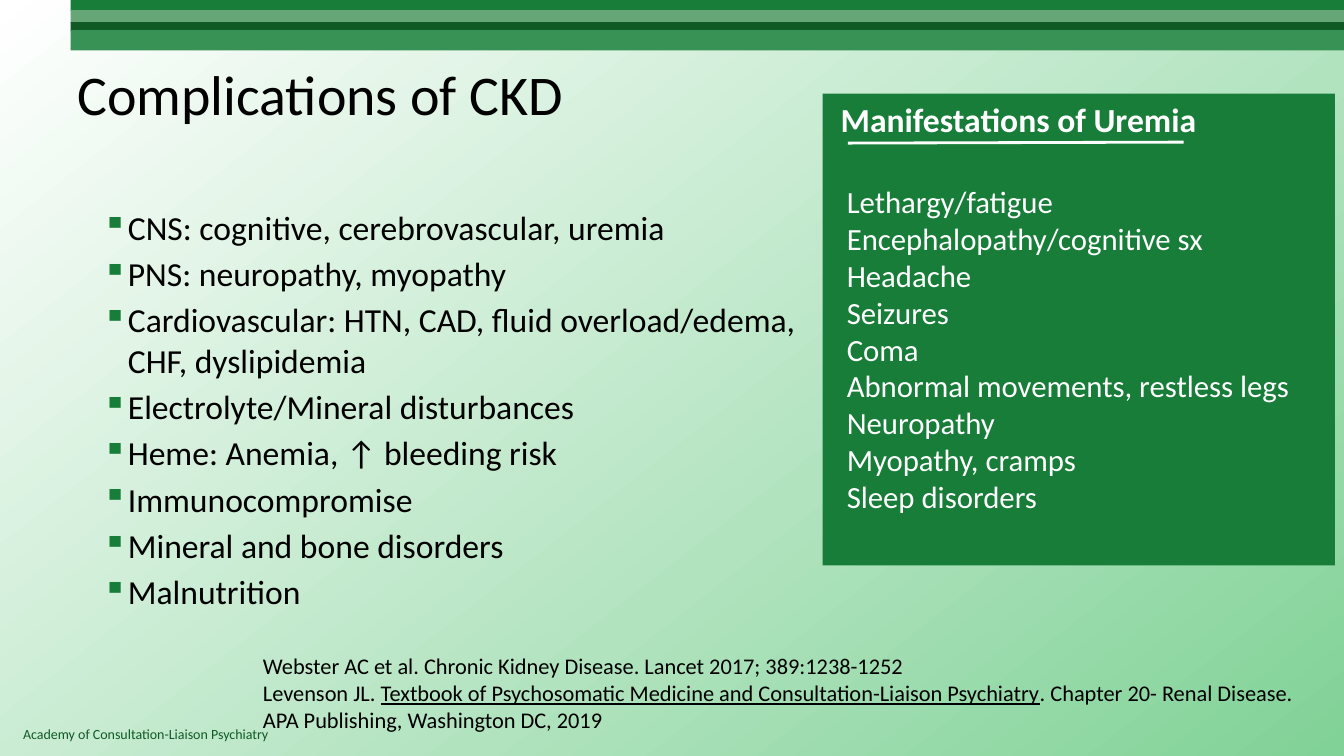
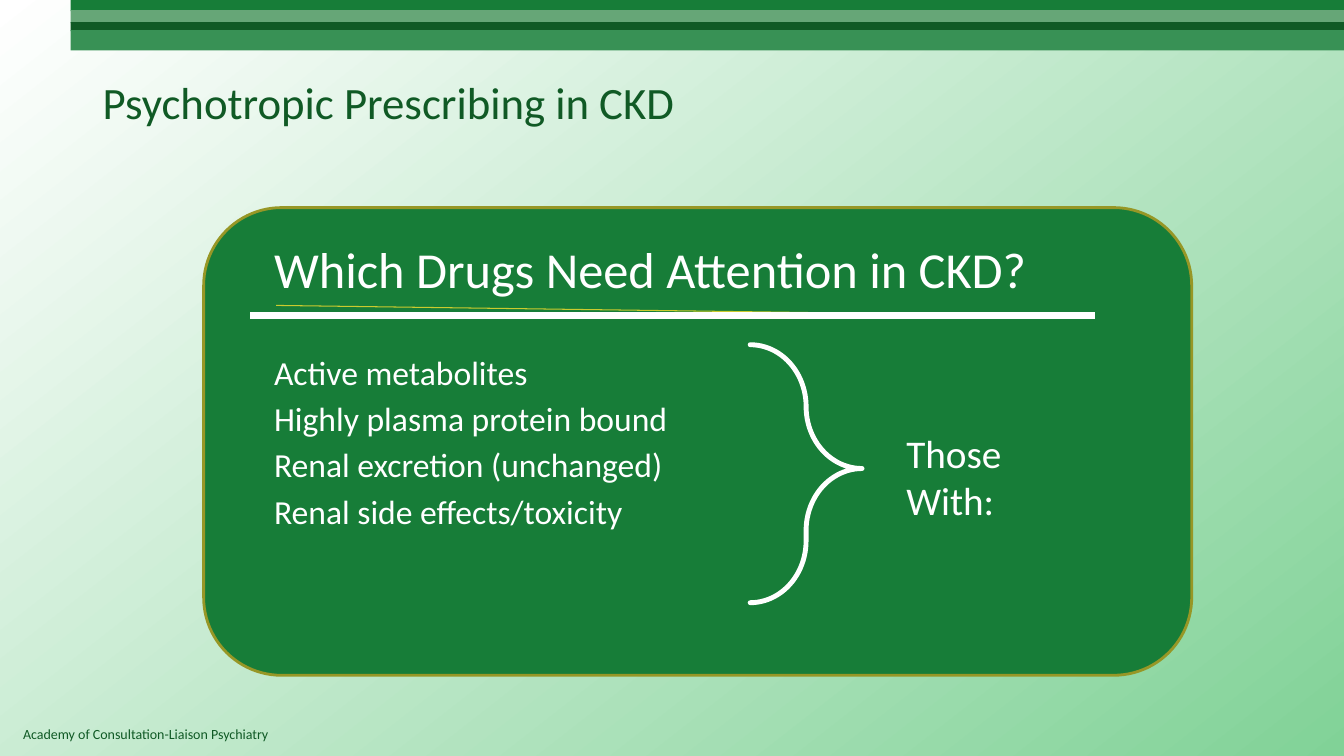
from lxml import etree
from pptx import Presentation
from pptx import util as u
from pptx.dml.color import RGBColor
from pptx.enum import shapes, text
from pptx.oxml.ns import qn

PX = 9144  # EMU per px, 100 px to the inch
WIDTH, HEIGHT = 1333, 750
FONT = "Calibri"
GAP = 4.3  # points between list items

COLORS = {
    "green": "177D38",
    "sage": "66A677",
    "dark": "105A25",
    "mid": "389155",
    "mint": "81D297",
    "white": "FFFFFF",
    "black": "000000",
    "olive": "979726",
    "lime": "CBCB2E",
}

LOOKS = {
    "large title": {"size": 40, "color": "black"},
    "title": {"size": 32, "color": "dark"},
    "footer": {"size": 10, "color": "dark"},
    "list": {"size": 24, "color": "black"},
    "reference": {"size": 16, "color": "black"},
    "panel heading": {"size": 24, "color": "white", "bold": True},
    "panel item": {"size": 22, "color": "white"},
    "card heading": {"size": 36, "color": "white"},
    "card item": {"size": 24, "color": "white"},
    "card label": {"size": 28, "color": "white"},
}

BANDS = [(0, 11, "green"), (10, 13, "sage"), (22, 9, "dark"), (30, 20, "mid")]
FOOTER = "Academy of Consultation-Liaison Psychiatry"

COMPLICATIONS = [
    "CNS: cognitive, cerebrovascular, uremia",
    "PNS: neuropathy, myopathy",
    "Cardiovascular: HTN, CAD, fluid overload/edema, CHF, dyslipidemia",
    "Electrolyte/Mineral disturbances",
    "Heme: Anemia, ↑ bleeding risk",
    "Immunocompromise",
    "Mineral and bone disorders",
    "Malnutrition",
]
UREMIA_SIGNS = [
    "Lethargy/fatigue",
    "Encephalopathy/cognitive sx",
    "Headache",
    "Seizures",
    "Coma",
    "Abnormal movements, restless legs",
    "Neuropathy",
    "Myopathy, cramps",
    "Sleep disorders",
]
REFERENCES = [
    [("Webster AC et al. Chronic Kidney Disease. Lancet 2017; 389:1238-1252", False)],
    [
        ("Levenson JL. ", False),
        ("Textbook of Psychosomatic Medicine and Consultation-Liaison Psychiatry", True),
        (". Chapter 20- Renal Disease. APA Publishing, Washington DC, 2019", False),
    ],
]
DRUG_TRAITS = [
    "Active metabolites",
    "Highly plasma protein bound",
    "Renal excretion (unchanged)",
    "Renal side effects/toxicity",
]


def rgb(name):
    return RGBColor.from_string(COLORS[name])


def px(*lengths):
    return [u.Emu(length * PX) for length in lengths]


def add_bullet(para):
    para_format = para._p.get_or_add_pPr()
    color = etree.SubElement(para_format, qn("a:buClr"))
    etree.SubElement(color, qn("a:srgbClr"), val=COLORS["green"])
    etree.SubElement(para_format, qn("a:buChar"), char="▪")


def add_para(frame, spans, look, before=0, left=0, bullet=False):
    """Append a paragraph; spans is a string or a list of (words, underlined)."""
    para = frame.add_paragraph() if frame.text else frame.paragraphs[0]
    para.alignment = text.PP_ALIGN.LEFT
    if before:
        para.space_before = u.Pt(before)
    if left:
        para_format = para._p.get_or_add_pPr()
        para_format.set("marL", str(left * PX))
        para_format.set("indent", str(-left * PX if bullet else 0))
    if bullet:
        add_bullet(para)
    style = LOOKS[look]
    values = {"name": FONT, "size": u.Pt(style["size"]), "bold": style.get("bold", False)}
    for words, underlined in [(spans, False)] if isinstance(spans, str) else spans:
        span = para.add_run()
        span.text = words
        for key, value in {**values, "underline": underlined}.items():
            setattr(span.font, key, value)
        span.font.color.rgb = rgb(style["color"])


def add_text(page, box, wrap=True, anchor=text.MSO_ANCHOR.TOP):
    frame = page.shapes.add_textbox(*px(*box)).text_frame
    frame.word_wrap = wrap
    frame.vertical_anchor = anchor
    return frame


def add_shape(page, kind, box, fill=None, line=None, weight=0):
    shape = page.shapes.add_shape(kind, *px(*box))
    shape.shadow.inherit = False
    if fill:
        shape.fill.solid()
        shape.fill.fore_color.rgb = rgb(fill)
    else:
        shape.fill.background()
    if line:
        shape.line.color.rgb = rgb(line)
        shape.line.width = u.Pt(weight)
    else:
        shape.line.fill.background()
    return shape


def add_line(page, start, end, color, weight):
    line = page.shapes.add_connector(shapes.MSO_CONNECTOR.STRAIGHT, *px(*start, *end))
    line.line.color.rgb = rgb(color)
    line.line.width = u.Pt(weight)
    etree.SubElement(line._element.spPr, qn("a:effectLst"))


def add_page(deck):
    """Add a slide with the shared background, bands and footer."""
    page = deck.slides.add_slide(deck.slide_layouts[6])
    fill = page.background.fill
    fill.gradient()
    fill.gradient_angle = 308
    for stop, color in zip(fill.gradient_stops, ("white", "mint")):
        stop.color.rgb = rgb(color)
    for top, height, color in BANDS:
        add_shape(page, shapes.MSO_SHAPE.RECTANGLE, (70, top, WIDTH - 70, height), color)
    add_para(add_text(page, (13, 715, 925, 27)), FOOTER, "footer")
    return page


def add_title(page, box, words, look):
    add_para(add_text(page, box, anchor=text.MSO_ANCHOR.MIDDLE), words, look)


def add_complications(page, box):
    frame = add_text(page, box)
    for index, item in enumerate(COMPLICATIONS):
        add_para(frame, item, "list", before=GAP if index else 0, left=25, bullet=True)


def add_uremia_panel(page, box):
    left, top = box[:2]
    frame = add_shape(page, shapes.MSO_SHAPE.RECTANGLE, box, "green").text_frame
    frame.word_wrap = True
    frame.vertical_anchor = text.MSO_ANCHOR.TOP
    add_para(frame, "Manifestations of Uremia", "panel heading", left=8)
    for index, sign in enumerate(UREMIA_SIGNS):
        add_para(frame, sign, "panel item", before=0 if index else 31, left=14)
    add_line(page, (left + 25, top + 49), (left + 358, top + 48), "white", 2)


def add_references(page, box):
    frame = add_text(page, box)
    for reference in REFERENCES:
        add_para(frame, reference, "reference")


def add_brace(page, box):
    brace = add_shape(page, shapes.MSO_SHAPE.RIGHT_BRACE, box, line="white", weight=3.5)
    brace.adjustments[0], brace.adjustments[1] = 0.57, 0.48
    brace._element.spPr.find(qn("a:ln")).set("cap", "rnd")


def add_drug_card(page, box):
    left, top, width, height = box
    add_shape(page, shapes.MSO_SHAPE.ROUNDED_RECTANGLE, box, "green", "olive", 2)
    frame = add_text(page, (left + 60, top + 25, width - 80, height - 45))
    add_para(frame, "Which Drugs Need Attention in CKD?", "card heading")
    for index, trait in enumerate(DRUG_TRAITS):
        add_para(frame, trait, "card item", before=GAP if index else 38)
    add_line(page, (left + 72, top + 97), (left + 821, top + 107), "lime", 0.75)
    add_line(page, (left + 46, top + 107), (left + 884, top + 107), "white", 4.5)
    add_brace(page, (left + 542, top + 136, 111, 256))
    label = add_text(page, (left + 687, top + 215, 125, 104), wrap=False)
    for word in ("Those", "With:"):
        add_para(label, word, "card label")


def build_complications(deck):
    page = add_page(deck)
    add_title(page, (67, 30, 1200, 125), "Complications of CKD", "large title")
    add_complications(page, (92, 200, 724, 476))
    add_uremia_panel(page, (816, 93, 508, 468))
    add_references(page, (251, 642, 1073, 91))


def build_prescribing(deck):
    page = add_page(deck)
    add_drug_card(page, (202, 206, 980, 464))
    add_title(page, (92, 28, 1150, 145), "Psychotropic Prescribing in CKD", "title")


def main():
    deck = Presentation()
    deck.slide_width, deck.slide_height = px(WIDTH, HEIGHT)
    build_complications(deck)
    build_prescribing(deck)
    deck.save("out.pptx")


if __name__ == "__main__":
    main()
